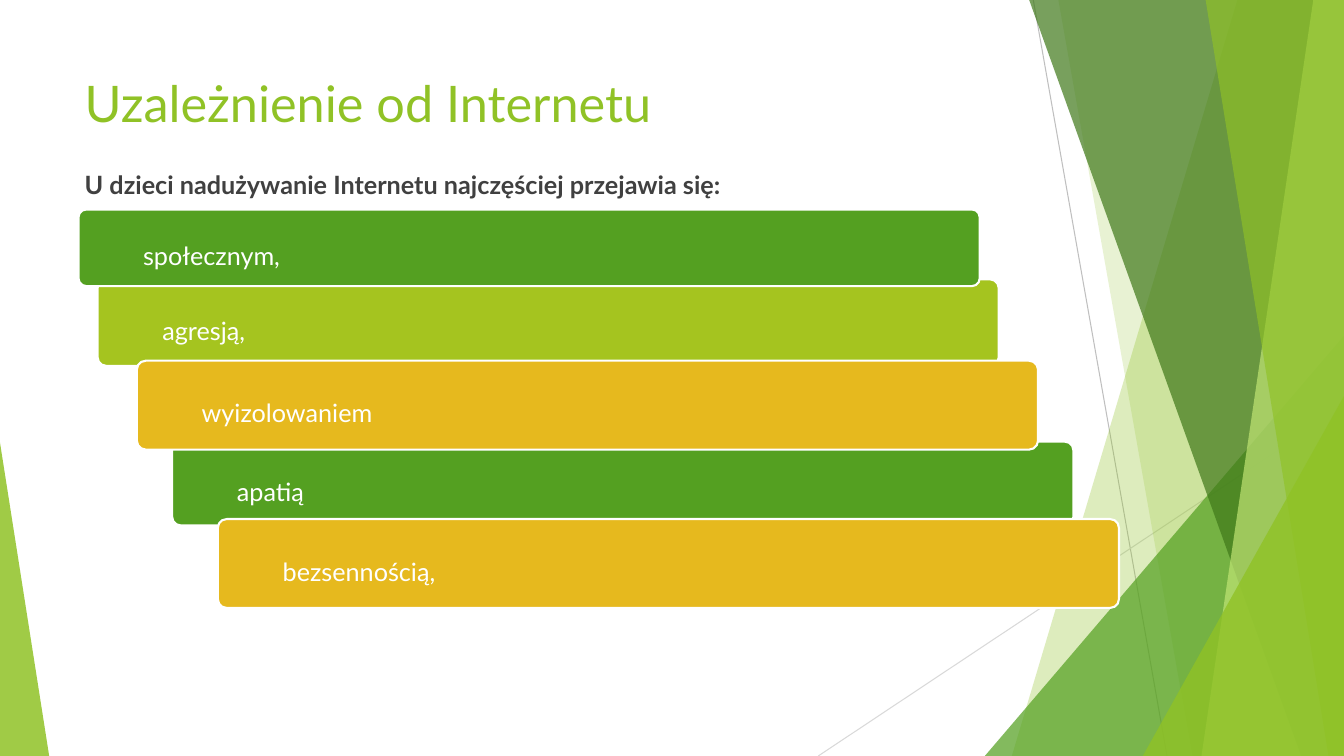
from dataclasses import dataclass

import pptx
import pptx.dml.color
import pptx.enum.dml
import pptx.enum.shapes
import pptx.enum.text
import pptx.oxml
import pptx.oxml.ns
import pptx.util

Cm = pptx.util.Cm
Pt = pptx.util.Pt
MSO_SHAPE = pptx.enum.shapes.MSO_SHAPE
ANCHOR = pptx.enum.text.MSO_ANCHOR

SLIDE_W, SLIDE_H = 33.87, 19.05


@dataclass(frozen=True)
class Theme:
    font: str = "Lato"
    white: str = "FFFFFF"
    body: str = "404040"
    lime: str = "90C226"
    pale_lime: str = "C0E474"
    green: str = "54A021"
    dark_green: str = "3F7819"
    yellow_green: str = "A5C41F"
    amber: str = "E6B91E"
    mid_grey: str = "BFBFBF"
    light_grey: str = "D9D9D9"
    title_size: int = 36
    text_size: int = 18


THEME = Theme()

# Symptom, colour, left, top, height; later bars overlap earlier ones.
SYMPTOMS = [
    ("apatią", THEME.green, 4.34, 11.13, 2.11),
    ("agresją,", THEME.yellow_green, 2.46, 7.04, 2.18),
    ("bezsennością,", THEME.amber, 5.49, 13.08, 2.24),
    ("społecznym,", THEME.green, 1.98, 5.28, 1.93),
    ("wyizolowaniem", THEME.amber, 3.45, 9.09, 2.24),
]


def rgb(colour):
    return pptx.dml.color.RGBColor.from_string(colour)


def fill_facet(facet, colour, opacity):
    """Fill a borderless shape with a colour at the given opacity in percent."""
    facet.shadow.inherit = False
    facet.line.fill.background()
    facet.fill.solid()
    facet.fill.fore_color.rgb = rgb(colour)
    srgb = facet.fill._xPr.find(".//" + pptx.oxml.ns.qn("a:srgbClr"))
    alpha = pptx.oxml.parse_xml(f'<a:alpha {pptx.oxml.ns.nsdecls("a")} val="{opacity * 1000}"/>')
    srgb.append(alpha)


def add_edge_facet(slide, top_x, bottom_x, colour, opacity):
    """Fill from a slanted left side to the right edge of the slide."""
    top = Cm(-0.02)
    outline = slide.shapes.build_freeform(Cm(top_x), top)
    outline.add_line_segments([
        (Cm(SLIDE_W), top),
        (Cm(SLIDE_W), Cm(SLIDE_H)),
        (Cm(bottom_x), Cm(SLIDE_H)),
    ], close=True)
    fill_facet(outline.convert_to_shape(), colour, opacity)


def add_corner_facet(slide, left, top, width, apex, colour, opacity):
    """Stand a triangle on the bottom edge of the slide."""
    triangle = slide.shapes.add_shape(
        MSO_SHAPE.ISOSCELES_TRIANGLE, Cm(left), Cm(top), Cm(width), Cm(SLIDE_H - top))
    triangle.adjustments[0] = apex
    fill_facet(triangle, colour, opacity)


def add_hairline(slide, start, end, colour):
    hairline = slide.shapes.add_connector(
        pptx.enum.shapes.MSO_CONNECTOR.STRAIGHT, *map(Cm, start + end))
    hairline.line.color.rgb = rgb(colour)
    hairline.line.width = Pt(0.75)
    no_shadow = pptx.oxml.parse_xml(f'<a:effectLst {pptx.oxml.ns.nsdecls("a")}/>')
    hairline._element.spPr.append(no_shadow)


def add_decoration(slide):
    add_hairline(slide, (26.04, 0), (29.41, SLIDE_H), THEME.mid_grey)
    add_hairline(slide, (SLIDE_W, 10.24), (20.62, SLIDE_H), THEME.light_grey)
    add_edge_facet(slide, 31.19, 25.5, THEME.lime, 30)
    add_edge_facet(slide, 26.67, 30.05, THEME.lime, 20)
    add_corner_facet(slide, 24.82, 8.46, 9.05, 1, THEME.green, 72)
    add_edge_facet(slide, 25.93, 32.79, THEME.dark_green, 70)
    add_edge_facet(slide, 33.1, 30.28, THEME.pale_lime, 70)
    add_edge_facet(slide, 30.38, 33.48, THEME.lime, 65)
    add_corner_facet(slide, 28.8, 9.98, 5.07, 1, THEME.lime, 80)
    add_corner_facet(slide, 0, 11.15, 1.24, 0, THEME.lime, 85)


def write(paragraph, text, size, colour, bold=False):
    paragraph.alignment = pptx.enum.text.PP_ALIGN.LEFT
    run = paragraph.add_run()
    run.text = text
    run.font.name = THEME.font
    run.font.size = Pt(size)
    run.font.bold = bold
    run.font.color.rgb = rgb(colour)


def set_placeholder(placeholder, top, height, text, size, colour, bold=False):
    placeholder.left, placeholder.top = Cm(1.88), Cm(top)
    placeholder.width, placeholder.height = Cm(23.88), Cm(height)
    frame = placeholder.text_frame
    frame.auto_size = pptx.enum.text.MSO_AUTO_SIZE.NONE
    frame.vertical_anchor = ANCHOR.TOP
    write(frame.paragraphs[0], text, size, colour, bold)


def set_lead(placeholder):
    set_placeholder(placeholder, 4.14, 10.77,
                    "U dzieci nadużywanie Internetu najczęściej przejawia się:",
                    THEME.text_size, THEME.body, bold=True)
    lead = placeholder.text_frame.paragraphs[0]
    lead.space_before = Pt(10)
    properties = lead._p.get_or_add_pPr()
    properties.set("marL", "0")
    properties.set("indent", "0")
    properties.append(pptx.oxml.parse_xml(f'<a:buNone {pptx.oxml.ns.nsdecls("a")}/>'))


def add_symptom_bar(slide, symptom, colour, left, top, height):
    bar = slide.shapes.add_shape(
        MSO_SHAPE.ROUNDED_RECTANGLE, Cm(left), Cm(top), Cm(22.71), Cm(height))
    bar.adjustments[0] = 0.1
    bar.shadow.inherit = False
    bar.fill.solid()
    bar.fill.fore_color.rgb = rgb(colour)
    bar.line.color.rgb = rgb(THEME.white)
    bar.line.width = Pt(1.5)
    frame = bar.text_frame
    frame.word_wrap = True
    frame.vertical_anchor = ANCHOR.MIDDLE
    frame.margin_left = frame.margin_right = Cm(0.3)
    frame.margin_top = frame.margin_bottom = Cm(0.2)
    label = frame.paragraphs[0]
    label.level = 1
    label.line_spacing = 1.5
    properties = label._p.get_or_add_pPr()
    properties.set("marL", str(Cm(1.27)))
    properties.set("indent", "0")
    write(label, symptom, THEME.text_size, THEME.white)


def main():
    presentation = pptx.Presentation()
    presentation.slide_width, presentation.slide_height = Cm(SLIDE_W), Cm(SLIDE_H)
    slide = presentation.slides.add_slide(presentation.slide_layouts[1])
    add_decoration(slide)
    set_placeholder(slide.shapes.title, 1.7, 3.66, "Uzależnienie od Internetu",
                    THEME.title_size, THEME.lime)
    set_lead(slide.placeholders[1])
    for symptom in SYMPTOMS:
        add_symptom_bar(slide, *symptom)
    presentation.save("out.pptx")


if __name__ == "__main__":
    main()
